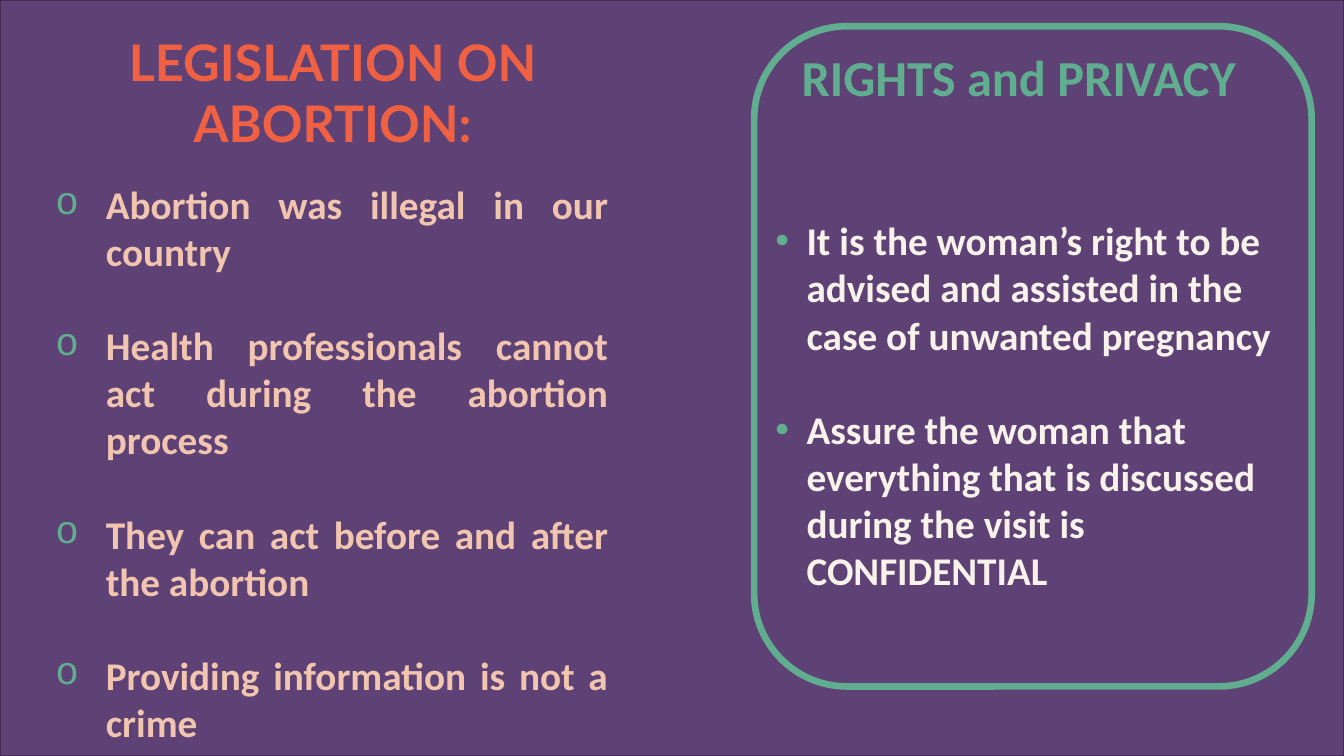
"""Build the slide on abortion legislation, rights and privacy."""
from lxml import etree
from pptx import Presentation
from pptx.dml.color import RGBColor
from pptx.enum.shapes import MSO_SHAPE
from pptx.enum.text import MSO_ANCHOR, MSO_AUTO_SIZE, PP_ALIGN
from pptx.oxml.ns import qn
from pptx.util import Inches, Pt

LEFT, CENTER, JUSTIFY = PP_ALIGN.LEFT, PP_ALIGN.CENTER, PP_ALIGN.JUSTIFY
COLORS = {
    "green": "60AD8F",
    "purple": "5E3973",
    "edge": "462A55",
    "orange": "F06043",
    "peach": "F1C5B0",
    "cream": "F9F2EA",
}


def color(name):
    return RGBColor.from_string(COLORS[name])


def write(holder, box, lines, font, size, tint, align, gap=0, bullet=None):
    holder.left, holder.top, holder.width, holder.height = map(Inches, box)
    frame = holder.text_frame
    frame.text = "\n".join(lines)
    frame.word_wrap = True
    frame.auto_size = MSO_AUTO_SIZE.NONE
    frame.vertical_anchor = MSO_ANCHOR.TOP
    for number, paragraph in enumerate(frame.paragraphs):
        if bullet:
            mark, mark_font, indent = bullet
            props = paragraph._p.get_or_add_pPr()
            props.set("marL", str(Inches(indent)))
            props.set("indent", str(-Inches(indent)))
            tone = etree.SubElement(props, qn("a:buClr"))
            etree.SubElement(tone, qn("a:srgbClr"), val=COLORS["green"])
            etree.SubElement(props, qn("a:buFont"), typeface=mark_font)
            etree.SubElement(props, qn("a:buChar"), char=mark)
        paragraph.alignment = align
        paragraph.line_spacing = 1.0
        paragraph.space_before = Pt(gap if number else 0)
        paragraph.space_after = Pt(0)
        paragraph.font.name = font
        paragraph.font.size = Pt(size)
        paragraph.font.bold = True
        paragraph.font.color.rgb = color(tint)


deck = Presentation()
deck.slide_width, deck.slide_height = Inches(13.33), Inches(7.5)
slide = deck.slides.add_slide(deck.slide_layouts.get_by_name("Comparison"))
slide.background.fill.solid()
slide.background.fill.fore_color.rgb = color("green")

legislation_title, unused, legislation, rights_title, rights = slide.placeholders
unused.element.getparent().remove(unused.element)

veil = slide.shapes.add_shape(MSO_SHAPE.RECTANGLE, 0, 0, deck.slide_width, deck.slide_height)
veil.shadow.inherit = False
veil.fill.solid()
veil.fill.fore_color.rgb = color("purple")
veil_tone = veil.element.spPr.find(qn("a:solidFill"))[0]
etree.SubElement(veil_tone, qn("a:alpha"), val="92000")
veil.line.color.rgb = color("edge")
veil.line.width = Pt(1)
legislation_title.element.addprevious(veil.element)

write(legislation_title, (1.1, 0.26, 4.4, 1.31), ["LEGISLATION ON", "ABORTION:"],
      "Lato", 36, "orange", CENTER)
write(legislation, (0.45, 1.74, 5.68, 5.76), [
    "Abortion was illegal in our country",
    "Health professionals cannot act during the abortion process",
    "They can act before and after the abortion",
    "Providing information is not a crime",
], "Calibri", 28, "peach", JUSTIFY, 33.6, ("o", "Courier New", 0.5))
write(rights, (7.59, 2.1, 5.32, 3.87), [
    "It is the woman’s right to be advised and assisted in the case of unwanted pregnancy",
    "Assure the woman that everything that is discussed during the visit is CONFIDENTIAL",
], "Calibri", 28, "cream", LEFT, 33.6, ("•", "Arial", 0.31))
write(rights_title, (7.85, 0.41, 4.85, 0.71), ["RIGHTS and PRIVACY"],
      "Calibri", 36, "green", LEFT)

rights_frame = slide.shapes.add_shape(
    MSO_SHAPE.ROUNDED_RECTANGLE, Inches(7.48), Inches(0.26), Inches(5.53), Inches(6.55))
rights_frame.shadow.inherit = False
rights_frame.fill.background()
rights_frame.line.color.rgb = color("green")
rights_frame.line.width = Pt(4.75)

deck.save("out.pptx")
